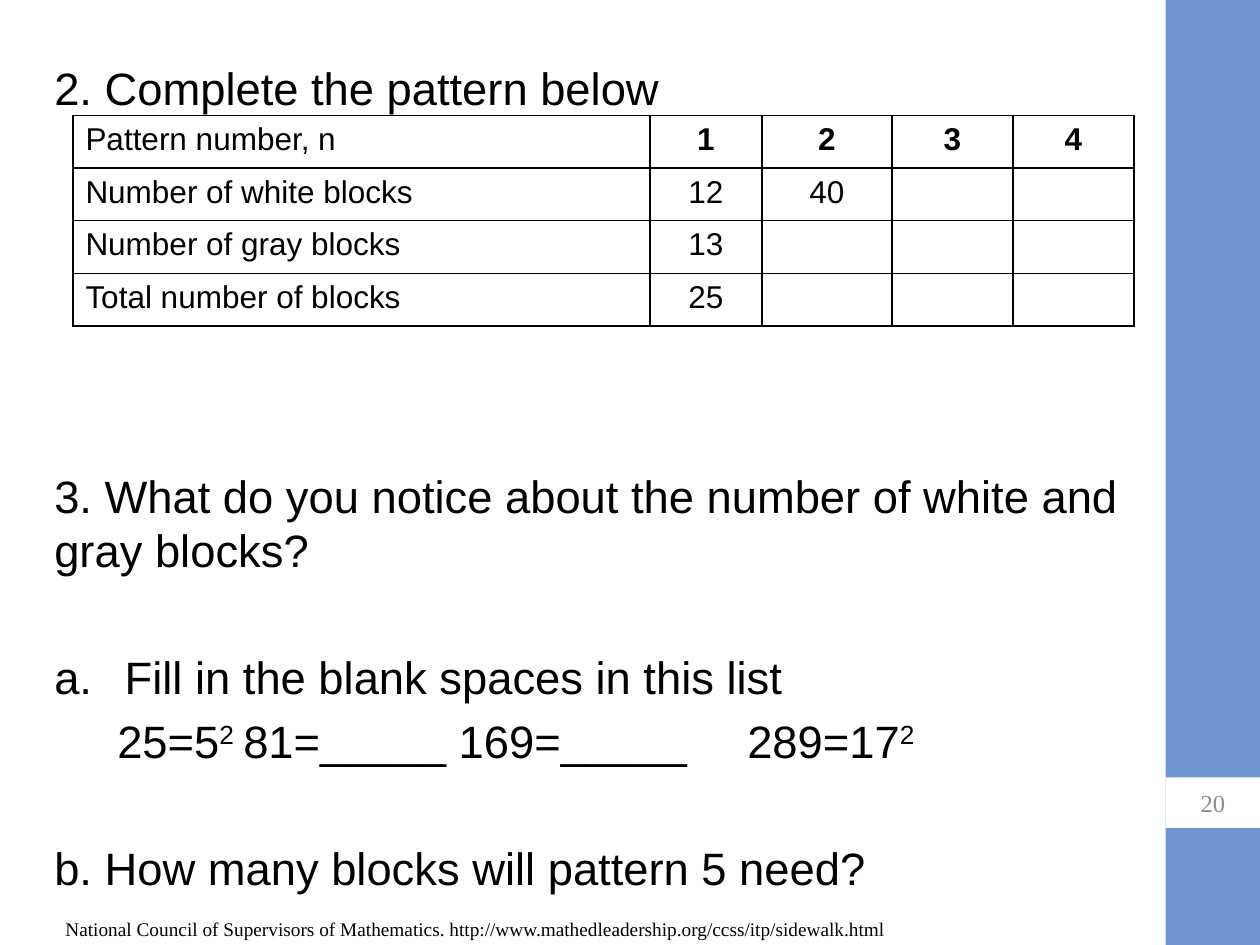
from dataclasses import dataclass

from lxml import etree
from pptx import Presentation
from pptx.dml.color import RGBColor
from pptx.enum.shapes import MSO_SHAPE
from pptx.enum.text import MSO_ANCHOR, MSO_AUTO_SIZE, PP_ALIGN
from pptx.oxml.ns import qn
from pptx.util import Cm, Pt

RECT = MSO_SHAPE.RECTANGLE
LEFT, CENTER = PP_ALIGN.LEFT, PP_ALIGN.CENTER
TOP, MIDDLE = MSO_ANCHOR.TOP, MSO_ANCHOR.MIDDLE
FIXED = MSO_AUTO_SIZE.NONE


@dataclass(frozen=True)
class Theme:
    sans: str = "Arial"
    serif: str = "Times New Roman"
    ink: str = "000000"
    paper: str = "FFFFFF"
    blue: str = "7097D3"
    gray: str = "8C8C8C"
    body: float = 25.9
    pitch: float = 30.9
    cell: float = 18
    page: float = 14
    note: float = 11


@dataclass(frozen=True)
class Box:
    left: float
    top: float
    width: float
    height: float

    def cm(self) -> tuple:
        return Cm(self.left), Cm(self.top), Cm(self.width), Cm(self.height)


@dataclass(frozen=True)
class Item:
    texts: tuple  # plain and raised text take turns
    before: float = 0
    letter: bool = False
    tabs: tuple = ()


THEME = Theme()
WIDE, HIGH = 25.4, 19.05
BLANK = 41.7  # space left for a written answer, in points
ITEMS = [
    Item(("2. Complete the pattern below",)),
    Item(("3. What do you notice about the number of white and gray blocks?",), 202),
    Item(("Fill in the blank spaces in this list",), BLANK, letter=True),
    Item(("\t25=5", "2", "\t81=_____ 169=_____\t289=17", "2"), 5.4,
         tabs=(0.76, 3.77, 13.23)),
    Item(("b. How many blocks will pattern 5 need?",), BLANK),
]
ROWS = [
    ("Pattern number, n", "1", "2", "3", "4"),
    ("Number of white blocks", "12", "40", "", ""),
    ("Number of gray blocks", "13", "", "", ""),
    ("Total number of blocks", "25", "", "", ""),
]
COLS = (11.63, 2.26, 2.62, 2.44, 2.44)
ROW = 1.06
NOTE = ("National Council of Supervisors of Mathematics. "
        "http://www.mathedleadership.org/ccss/itp/sidewalk.html")


def style(para, face: str, size: float, color: str, bold: bool = False) -> None:
    font = para.font
    font.name, font.size, font.bold = face, Pt(size), bold
    font.color.rgb = RGBColor.from_string(color)


def add_rect(slide, box: Box, color: str):
    rect = slide.shapes.add_shape(RECT, *box.cm())
    rect.shadow.inherit = False
    rect.fill.solid()
    rect.fill.fore_color.rgb = RGBColor.from_string(color)
    rect.line.fill.background()
    return rect


def add_item(para, item: Item) -> None:
    props = para._p.get_or_add_pPr()
    hang = Cm(1.42) if item.letter else 0
    props.set("marL", str(hang))
    props.set("indent", str(-hang))
    para.line_spacing = Pt(THEME.pitch)
    para.space_before = Pt(item.before)
    if item.letter:
        etree.SubElement(props, qn("a:buFont"), typeface=THEME.sans)
        etree.SubElement(props, qn("a:buAutoNum"), type="alphaLcPeriod")
    else:
        etree.SubElement(props, qn("a:buNone"))
    if item.tabs:
        stops = etree.SubElement(props, qn("a:tabLst"))
        for stop in item.tabs:
            etree.SubElement(stops, qn("a:tab"), pos=str(Cm(stop)), algn="l")
    style(para, THEME.sans, THEME.body, THEME.ink)
    for i, text in enumerate(item.texts):
        run = para.add_run()
        run.text = text
        if i % 2:
            run._r.get_or_add_rPr().set("baseline", "30000")


def add_body(slide, box: Box, items: list) -> None:
    body = slide.placeholders[1]
    body.left, body.top, body.width, body.height = box.cm()
    frame = body.text_frame
    frame.word_wrap, frame.auto_size = True, FIXED
    frame.vertical_anchor = TOP
    frame.margin_right = Cm(0.1)
    for i, item in enumerate(items):
        add_item(frame.add_paragraph() if i else frame.paragraphs[0], item)


def add_edges(cell, color: str) -> None:
    props = cell._tc.get_or_add_tcPr()
    for side in ("L", "R", "T", "B"):
        line = etree.SubElement(props, qn("a:ln" + side), w=str(Pt(1)))
        fill = etree.SubElement(line, qn("a:solidFill"))
        etree.SubElement(fill, qn("a:srgbClr"), val=color)


def add_grid(slide, left: float, top: float) -> None:
    box = Box(left, top, sum(COLS), ROW * len(ROWS))
    grid = slide.shapes.add_table(len(ROWS), len(COLS), *box.cm()).table
    grid.first_row = grid.horz_banding = False
    for col, width in zip(grid.columns, COLS):
        col.width = Cm(width)
    for r, row in enumerate(ROWS):
        grid.rows[r].height = Cm(ROW)
        for c, text in enumerate(row):
            cell = grid.cell(r, c)
            add_edges(cell, THEME.ink)
            cell.fill.background()
            para = cell.text_frame.paragraphs[0]
            para.text = text
            para.alignment = CENTER if c else LEFT
            style(para, THEME.sans, THEME.cell, THEME.ink, bold=r == 0 and c > 0)


def add_page(slide, box: Box, text: str) -> None:
    frame = add_rect(slide, box, THEME.paper).text_frame
    frame.vertical_anchor = MIDDLE
    para = frame.paragraphs[0]
    para.text, para.alignment = text, CENTER
    style(para, THEME.serif, THEME.page, THEME.gray)


def add_note(slide, box: Box, text: str) -> None:
    frame = slide.shapes.add_textbox(*box.cm()).text_frame
    frame.word_wrap = True
    para = frame.paragraphs[0]
    para.text = text
    style(para, THEME.serif, THEME.note, THEME.ink)


def main() -> None:
    deck = Presentation()
    deck.slide_width, deck.slide_height = Cm(WIDE), Cm(HIGH)
    slide = deck.slides.add_slide(deck.slide_layouts[1])
    title = slide.shapes.title._element
    title.getparent().remove(title)

    # Side band and questions
    add_rect(slide, Box(23.5, 0, 1.9, HIGH), THEME.blue)
    add_body(slide, Box(0.84, 1.1, 22.02, 17.15), ITEMS)

    # Page number, pattern table and source
    add_page(slide, Box(23.5, 15.67, 1.9, 1.02), "20")
    add_grid(slide, 1.47, 2.33)
    add_note(slide, Box(1.07, 18.36, 20.96, 0.69), NOTE)
    deck.save("out.pptx")


if __name__ == "__main__":
    main()
